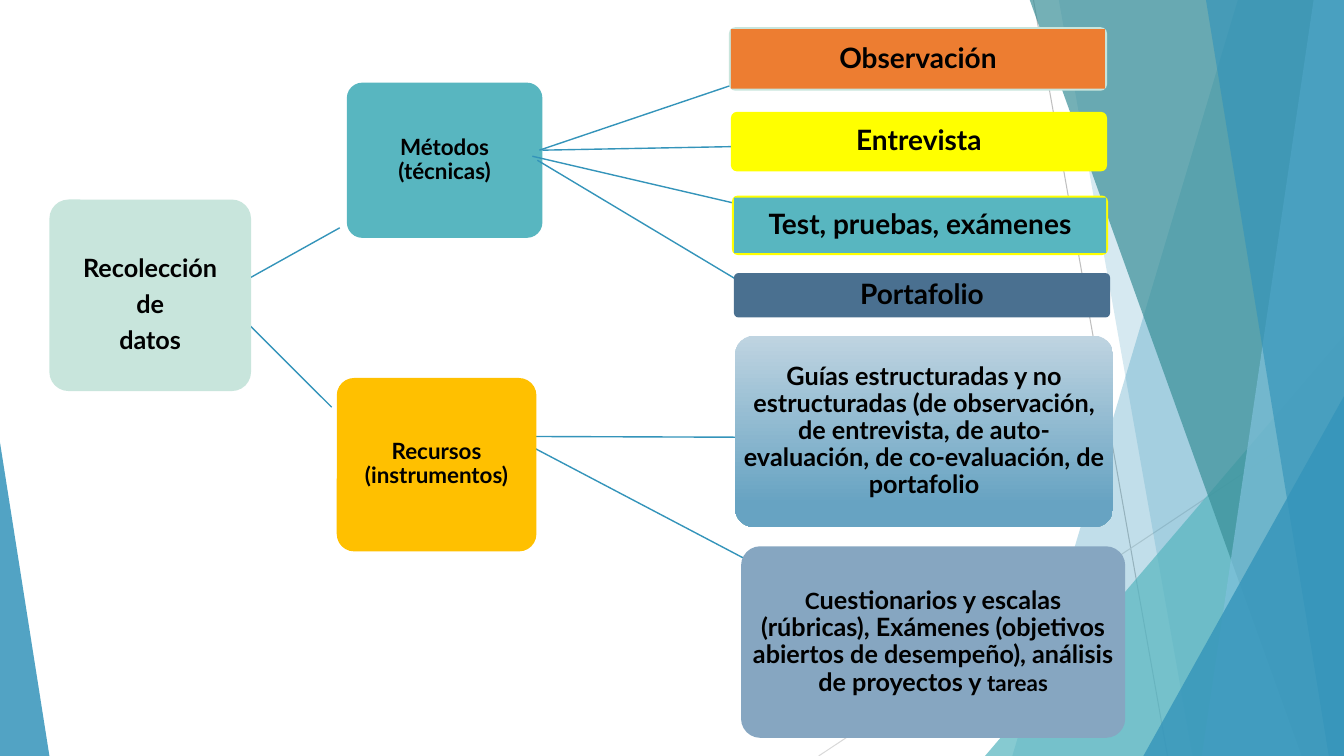
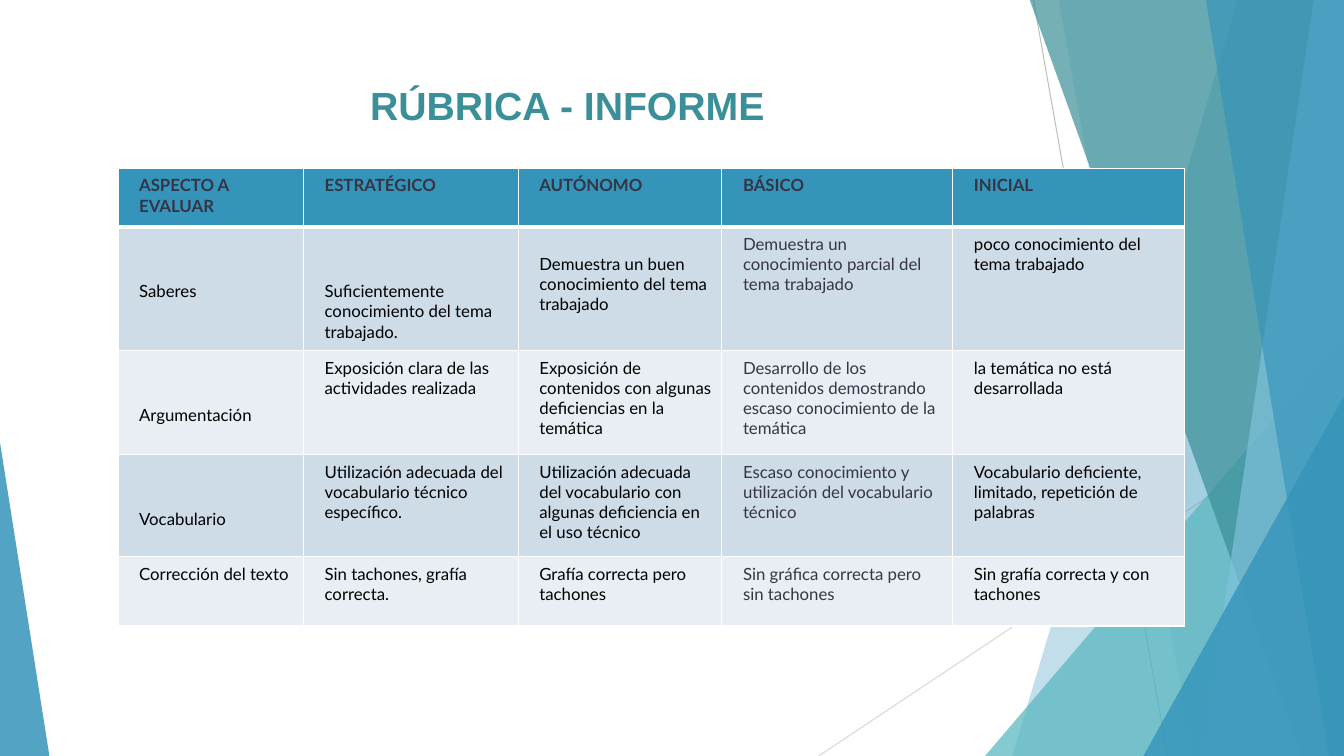
from lxml import etree
from pptx import Presentation
from pptx.dml.color import RGBColor
from pptx.enum import shapes, text
from pptx.oxml import ns
from pptx.util import Inches, Pt

COLORS = {
    "blue": "3494BA", "sky": "7FC1DB", "teal": "58B6C0", "deep teal": "3A8F98",
    "mint": "C8E5DC", "orange": "ED7D31", "yellow": "FFFF00", "gold": "FFC000",
    "slate": "4A7090", "steel": "86A6C1", "pale blue": "BFD4E1", "mid blue": "67A3C2",
    "band dark": "CEDCE7", "band light": "E8EEF3", "ink": "373545",
    "black": "000000", "white": "FFFFFF", "gray": "BFBFBF", "light gray": "D9D9D9",
}
BODY_FONT, TITLE_FONT = "Lato", "Arial"
WIDTH, HEIGHT = 13.33, 7.5

# Master decoration: (start, end, color), (top x, bottom x, color, opacity)
# and (left, top, width, tip position, color, opacity)
HAIRLINES = [((10.25, 0), (11.58, 7.5), "gray"), ((13.33, 4.03), (8.12, 7.5), "light gray")]
LOWER_BANDS = [(12.28, 10.04, "blue", 30), (10.5, 11.83, "blue", 20)]
UPPER_BANDS = [(10.21, 12.91, "deep teal", 70), (13.03, 11.92, "sky", 70),
               (11.96, 13.18, "blue", 65)]
BACK_TRIANGLES = [(9.77, 3.33, 3.56, 1, "teal", 72)]
FRONT_TRIANGLES = [(11.34, 3.93, 1.99, 1, "blue", 80), (0, 4.39, 0.49, 0, "blue", 85)]

# Each node: box, fill, paragraphs made of (text, size) runs; optional panel and top inset
METHODS_NODE = dict(box=(3.44, 0.82, 1.94, 1.54), fill="teal",
                    paragraphs=[[("Métodos (técnicas)", 16)]])
NODES = [
    dict(box=(0.49, 1.98, 2, 1.9), fill="mint", top_inset=0.2,
         paragraphs=[[("Recolección", 18)], [("de", 18)], [("datos", 18)]]),
    dict(box=(7.23, 0.27, 3.75, 0.63), fill="mint", panel="orange",
         paragraphs=[[("Observación", 20)]]),
    dict(box=(7.25, 1.11, 3.73, 0.59), fill="yellow", paragraphs=[[("Entrevista", 20)]]),
    dict(box=(7.26, 1.94, 3.73, 0.59), fill="yellow", panel="teal",
         paragraphs=[[("Test, pruebas, exámenes", 20)]]),
    dict(box=(7.28, 2.71, 3.73, 0.44), fill="slate", paragraphs=[[("Portafolio", 20)]]),
    dict(box=(7.29, 3.33, 3.75, 1.9), fill=("pale blue", "mid blue"),
         paragraphs=[[("Guías estructuradas y no estructuradas (de observación, de entrevista, "
                       "de auto-evaluación, de co-evaluación, de portafolio", 18)]]),
    dict(box=(7.35, 5.42, 3.81, 1.9), fill="steel",
         paragraphs=[[("C", 16),
                      ("uestionarios y escalas (rúbricas), Exámenes (objetivos abiertos de "
                       "desempeño), análisis de proyectos y", 18),
                      (" tareas", 16)]]),
    dict(box=(3.34, 3.75, 1.98, 1.72), fill="gold",
         paragraphs=[[("Recursos (instrumentos)", 16)]]),
]
BRANCHES = [
    ((2.28, 3.03), (3.29, 4.04)), ((2.33, 2.84), (3.37, 2.26)),
    ((5.27, 4.43), (7.99, 5.86)), ((5.35, 1.49), (8.1, 0.56)),
    ((5.38, 1.49), (8.05, 1.44)), ((5.28, 1.55), (7.99, 2.18)),
    ((5.19, 4.33), (7.99, 4.34)), ((5.33, 1.59), (7.4, 2.83)),
]

RUBRIC_TITLE = "RÚBRICA - INFORME"
RUBRIC = [
    ["ASPECTO A EVALUAR", "ESTRATÉGICO", "AUTÓNOMO", "BÁSICO", "INICIAL"],
    ["Saberes", "Suficientemente conocimiento del tema trabajado.",
     "Demuestra un buen conocimiento del tema trabajado",
     "Demuestra un conocimiento parcial del tema trabajado",
     "poco conocimiento del tema trabajado"],
    ["Argumentación", "Exposición clara de las actividades realizada",
     "Exposición de contenidos con algunas deficiencias en la temática",
     "Desarrollo de los contenidos demostrando escaso conocimiento de la temática",
     "la temática no está desarrollada"],
    ["Vocabulario", "Utilización adecuada del vocabulario técnico específico.",
     "Utilización adecuada del vocabulario con algunas deficiencia en el uso técnico",
     "Escaso conocimiento y utilización del vocabulario técnico",
     "Vocabulario deficiente, limitado, repetición de palabras"],
    ["Corrección del texto", "Sin tachones, grafía correcta.",
     "Grafía correcta pero tachones", "Sin gráfica correcta pero sin tachones",
     "Sin grafía correcta y con tachones"],
]
COLUMN_WIDTHS = [1.84, 2.13, 2.02, 2.29, 2.3]
ROW_HEIGHTS = [0.58, 1.23, 1.03, 1.01, 0.69]
LOWERED_CELLS = {(1, 0): 0.54, (1, 1): 0.54, (1, 2): 0.27, (2, 0): 0.54, (3, 0): 0.54}
BASIC_COLUMN = 3


def rgb(name):
    return RGBColor.from_string(COLORS[name])


def inches(values):
    return [Inches(value) for value in values]


def style_font(font, size, color, bold=True, name=BODY_FONT):
    font.name, font.size, font.bold = name, Pt(size), bold
    font.color.rgb = rgb(color)


def paint(shape, fill, opacity=100):
    """Fill with a color name or a (top, bottom) pair, without outline or shadow."""
    shape.shadow.inherit = False
    shape.line.fill.background()
    if isinstance(fill, tuple):
        shape.fill.gradient()
        shape.fill.gradient_angle = 270
        for stop, color, position in zip(shape.fill.gradient_stops, fill, (0, 0.88)):
            stop.color.rgb, stop.position = rgb(color), position
        return
    shape.fill.solid()
    shape.fill.fore_color.rgb = rgb(fill)
    if opacity < 100:
        color = shape.element.xpath("./p:spPr/a:solidFill/a:srgbClr")[0]
        etree.SubElement(color, ns.qn("a:alpha"), val=str(opacity * 1000))


def add_line(slide, start, end, color, width):
    line = slide.shapes.add_connector(shapes.MSO_CONNECTOR.STRAIGHT, *inches(start + end))
    line.line.color.rgb = rgb(color)
    line.line.width = Pt(width)
    etree.SubElement(line.element.spPr, ns.qn("a:effectLst"))
    return line


def add_band(slide, top_x, bottom_x, color, opacity):
    """Add a band reaching from a slanted left edge to the right edge of the slide."""
    top = -0.01
    builder = slide.shapes.build_freeform(*inches((top_x, top)), scale=1)
    corners = [(WIDTH, top), (WIDTH, HEIGHT), (bottom_x, HEIGHT)]
    builder.add_line_segments([inches(corner) for corner in corners], close=True)
    band = builder.convert_to_shape()
    paint(band, color, opacity)
    return band


def add_triangle(slide, left, top, width, tip, color, opacity):
    triangle = slide.shapes.add_shape(shapes.MSO_SHAPE.ISOSCELES_TRIANGLE,
                                      *inches((left, top, width, HEIGHT - top)))
    triangle.adjustments[0] = tip
    paint(triangle, color, opacity)
    return triangle


def decorate_master(presentation, slide):
    """Draw the decoration on a slide, then move it to the master behind everything."""
    parts = [add_line(slide, *hairline, 0.75) for hairline in HAIRLINES]
    parts += [add_band(slide, *band) for band in LOWER_BANDS]
    parts += [add_triangle(slide, *triangle) for triangle in BACK_TRIANGLES]
    parts += [add_band(slide, *band) for band in UPPER_BANDS]
    parts += [add_triangle(slide, *triangle) for triangle in FRONT_TRIANGLES]
    master_tree = presentation.slide_master.shapes.element
    for index, part in enumerate(parts):
        part.element.xpath(".//p:cNvPr")[0].set("id", str(100 + index))
        master_tree.insert(2 + index, part.element)


def add_node(slide, box, fill, paragraphs, panel=None, top_inset=0.01):
    node = slide.shapes.add_shape(shapes.MSO_SHAPE.ROUNDED_RECTANGLE, *inches(box))
    node.adjustments[0] = 0.1
    paint(node, fill)
    if panel:
        left, top, width, height = box
        gap = 0.02
        node = slide.shapes.add_shape(
            shapes.MSO_SHAPE.RECTANGLE,
            *inches((left + gap, top + gap, width - 2 * gap, height - 2 * gap)))
        paint(node, panel)
    frame = node.text_frame
    frame.word_wrap = True
    frame.vertical_anchor = text.MSO_ANCHOR.MIDDLE
    frame.margin_left = frame.margin_right = frame.margin_bottom = Inches(0.01)
    frame.margin_top = Inches(top_inset)
    for index, runs in enumerate(paragraphs):
        paragraph = frame.add_paragraph() if index else frame.paragraphs[0]
        paragraph.alignment = text.PP_ALIGN.CENTER
        paragraph.line_spacing = 0.9
        paragraph.space_after = Pt(0.35 * runs[0][1])
        for words, size in runs:
            run = paragraph.add_run()
            run.text = words
            style_font(run.font, size, "black")


def set_borders(cell, **widths):
    properties = cell._tc.get_or_add_tcPr()
    for side in ("L", "R", "T", "B"):
        line = etree.SubElement(properties, ns.qn("a:ln" + side),
                                w=str(Pt(widths.get(side, 1))))
        fill = etree.SubElement(line, ns.qn("a:solidFill"))
        etree.SubElement(fill, ns.qn("a:srgbClr"), val=COLORS["white"])


def add_rubric(slide):
    table = slide.shapes.add_table(
        len(RUBRIC), len(COLUMN_WIDTHS),
        *inches((1.17, 1.67, sum(COLUMN_WIDTHS), sum(ROW_HEIGHTS)))).table
    for column, width in zip(table.columns, COLUMN_WIDTHS):
        column.width = Inches(width)
    for row, height in zip(table.rows, ROW_HEIGHTS):
        row.height = Inches(height)
    for row_index, row in enumerate(RUBRIC):
        header = row_index == 0
        band = "blue" if header else ("band light", "band dark")[row_index % 2]
        header_edge = {0: {"B": 3}, 1: {"T": 3}}.get(row_index, {})
        for column_index, words in enumerate(row):
            cell = table.cell(row_index, column_index)
            set_borders(cell, **header_edge)
            cell.fill.solid()
            cell.fill.fore_color.rgb = rgb(band)
            cell.margin_left = Inches(0.21)
            cell.margin_right = cell.margin_bottom = Inches(0.07)
            cell.margin_top = Inches(LOWERED_CELLS.get((row_index, column_index), 0.07))
            cell.text_frame.text = words
            color = "ink" if header or column_index == BASIC_COLUMN else "black"
            style_font(cell.text_frame.paragraphs[0].runs[0].font, 12, color, header)


def build_map_slide(slide):
    add_node(slide, **METHODS_NODE)
    for start, end in BRANCHES:
        add_line(slide, start, end, "blue", 1)
    for node in NODES:
        add_node(slide, **node)


def build_rubric_slide(slide):
    title = slide.shapes.title
    title.left, title.top, title.width, title.height = inches((3.57, 0.76, 4.77, 0.72))
    frame = title.text_frame
    frame.text = RUBRIC_TITLE
    frame.auto_size = text.MSO_AUTO_SIZE.NONE
    frame.vertical_anchor = text.MSO_ANCHOR.TOP
    paragraph = frame.paragraphs[0]
    paragraph.alignment = text.PP_ALIGN.LEFT
    style_font(paragraph.runs[0].font, 28, "deep teal", name=TITLE_FONT)
    add_rubric(slide)


def main():
    presentation = Presentation()
    presentation.slide_width, presentation.slide_height = inches((WIDTH, HEIGHT))
    title_only, blank = presentation.slide_layouts[5], presentation.slide_layouts[6]
    map_slide = presentation.slides.add_slide(blank)
    decorate_master(presentation, map_slide)
    build_map_slide(map_slide)
    build_rubric_slide(presentation.slides.add_slide(title_only))
    presentation.save("out.pptx")


if __name__ == "__main__":
    main()
